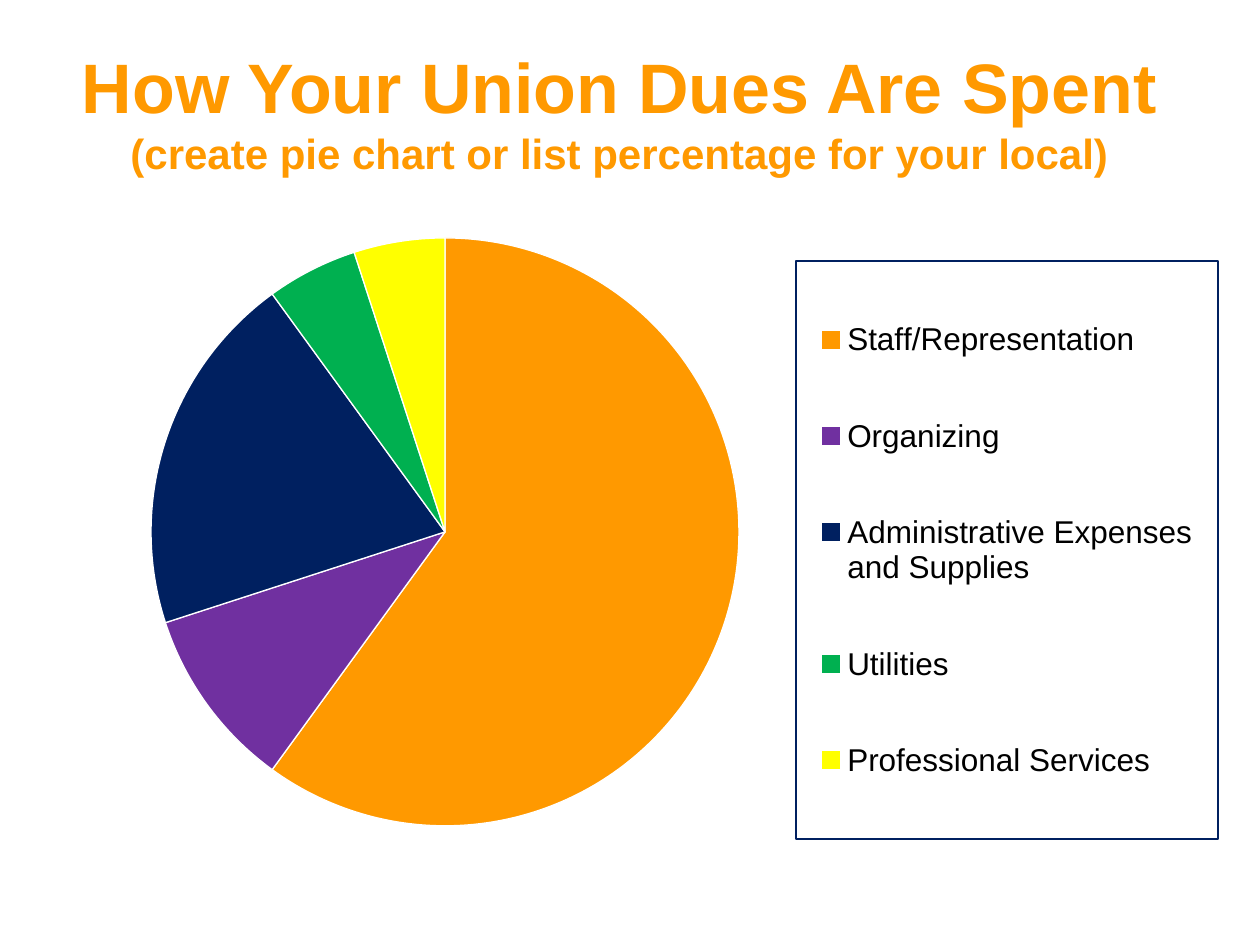
from lxml import etree
from pptx import Presentation
from pptx import util as u
from pptx.chart.data import CategoryChartData
from pptx.dml.color import RGBColor
from pptx.enum import chart as kinds, text
from pptx.oxml import parse_xml
from pptx.oxml.ns import nsdecls, qn

PX = u.Inches(1) // 126
FONT = "Arial"
ORANGE, NAVY, BLACK, WHITE = "FF9900", "002060", "000000", "FFFFFF"
SHARES = [
    ("Staff/Representation", 60, ORANGE),
    ("Organizing", 10, "7030A0"),
    ("Administrative Expenses and Supplies", 20, NAVY),
    ("Utilities", 5, "00B050"),
    ("Professional Services", 5, "FFFF00"),
]


def color(code):
    return RGBColor.from_string(code)


def place(parent, index, frame, box, inner=False):
    """Fix a chart part at box, a px rectangle inside the px rectangle frame."""
    for old in parent.findall(qn("c:layout")):
        parent.remove(old)
    left, top, width, height = frame
    x, y, w, h = box
    parts = {"x": (x - left) / width, "y": (y - top) / height,
             "w": w / width, "h": h / height}
    layout = parse_xml(f"<c:layout {nsdecls('c')}><c:manualLayout/></c:layout>")
    manual = layout[0]

    def add(tag, val):
        etree.SubElement(manual, qn("c:" + tag)).set("val", val)

    if inner:
        add("layoutTarget", "inner")
    add("xMode", "edge")
    add("yMode", "edge")
    for tag, part in parts.items():
        add(tag, f"{part:.4f}")
    parent.insert(index, layout)


class Deck:
    def __init__(self, width, height):
        self.prs = Presentation()
        self.prs.slide_width, self.prs.slide_height = width * PX, height * PX
        self.slide = self.prs.slides.add_slide(self.prs.slide_layouts[6])

    def style(self, font, size, code, bold=False):
        font.name, font.size, font.bold = FONT, u.Pt(size), bold
        font.color.rgb = color(code)

    def title(self, box, lines):
        shape = self.slide.shapes.add_textbox(*(n * PX for n in box))
        frame = shape.text_frame
        frame.word_wrap = True
        frame.vertical_anchor = text.MSO_ANCHOR.MIDDLE
        para = frame.paragraphs[0]
        para.alignment = text.PP_ALIGN.CENTER
        for i, (words, size) in enumerate(lines):
            if i:
                para.add_line_break()
            run = para.add_run()
            run.text = words
            self.style(run.font, size, ORANGE, True)

    def pie(self, box, plot, key, shares):
        data = CategoryChartData()
        data.categories = [name for name, _, _ in shares]
        data.add_series("Series 1", [value for _, value, _ in shares])
        chart = self.slide.shapes.add_chart(
            kinds.XL_CHART_TYPE.PIE, *(n * PX for n in box), data).chart
        chart.has_title = False
        self.style(chart.font, 18, BLACK)
        series = chart.plots[0].series[0]
        for i, (_, _, code) in enumerate(shares):
            form = series.points[i].format
            form.fill.solid()
            form.fill.fore_color.rgb = color(code)
            form.line.color.rgb = color(WHITE)
            form.line.width = u.Pt(0.75)
        area = chart._chartSpace.chart.plotArea
        place(area, 0, box, plot, inner=True)
        self.legend(chart, box, key)

    def legend(self, chart, box, key):
        chart.has_legend = True
        legend = chart.legend
        legend.position = kinds.XL_LEGEND_POSITION.RIGHT
        legend.include_in_layout = False
        self.style(legend.font, 18, BLACK)
        node = legend._element
        place(node, 1, box, key)
        border = parse_xml(
            f"<c:spPr {nsdecls('c', 'a')}><a:ln w='9525'><a:solidFill>"
            f"<a:srgbClr val='{NAVY}'/></a:solidFill></a:ln></c:spPr>")
        node.find(qn("c:overlay")).addnext(border)


def main():
    deck = Deck(1260, 945)
    deck.title((0, 32, 1239, 157), [
        ("How Your Union Dues Are Spent", 40),
        ("(create pie chart or list percentage for your local)", 24),
    ])
    deck.pie((63, 221, 1166, 624), (151, 238, 588, 588),
             (796, 261, 422, 578), SHARES)
    deck.prs.save("out.pptx")


if __name__ == "__main__":
    main()
